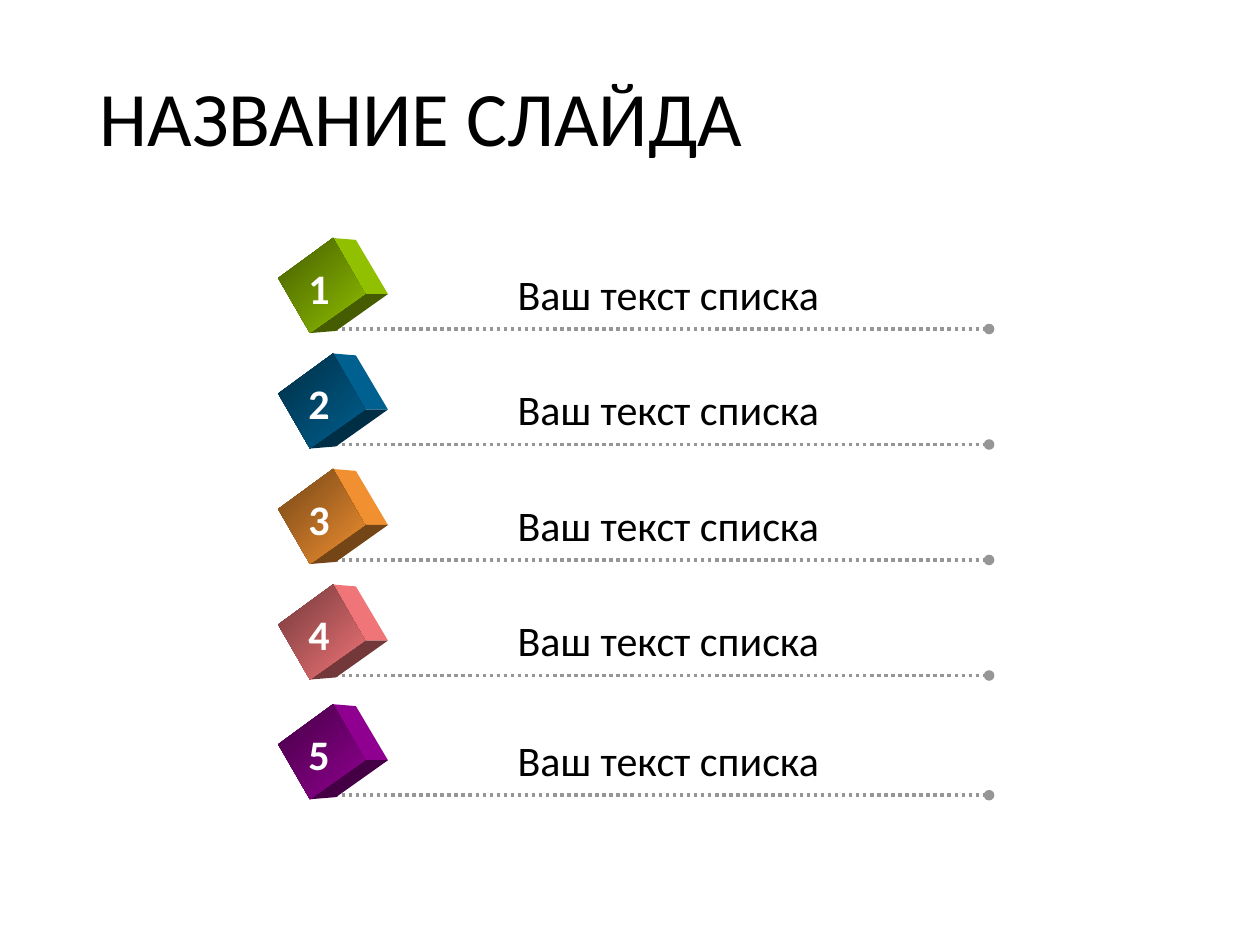
from lxml import etree
from pptx import Presentation
from pptx.dml.color import RGBColor
from pptx.enum.dml import MSO_LINE
from pptx.enum.shapes import MSO_CONNECTOR
from pptx.enum.text import MSO_ANCHOR, PP_ALIGN
from pptx.oxml.ns import qn
from pptx.util import Pt

DOTTED = MSO_LINE.ROUND_DOT
STRAIGHT = MSO_CONNECTOR.STRAIGHT
MIDDLE = MSO_ANCHOR.MIDDLE
LEFT = PP_ALIGN.LEFT

BLACK = RGBColor(0x00, 0x00, 0x00)
WHITE = RGBColor(0xFF, 0xFF, 0xFF)
GRAY = RGBColor(0x96, 0x96, 0x96)
GREEN = RGBColor(0x99, 0xCC, 0x00)
BLUE = RGBColor(0x00, 0x66, 0x99)
ORANGE = RGBColor(0xFF, 0x99, 0x33)
PINK = RGBColor(0xFF, 0x7C, 0x80)
PURPLE = RGBColor(0x99, 0x00, 0x99)

TITLE = "НАЗВАНИЕ СЛАЙДА"
ITEMS = [
    ("Ваш текст списка", GREEN),
    ("Ваш текст списка", BLUE),
    ("Ваш текст списка", ORANGE),
    ("Ваш текст списка", PINK),
    ("Ваш текст списка", PURPLE),
]
FIRST_LINE, PITCH, LAST_EXTRA = 188, 66, 2.4
LINE_LEFT, LINE_RIGHT = 187.2, 565.2

TOP, LEFT_CORNER, BOTTOM, INNER = (190.3, -52), (158.9, -29.1), (177.1, 2.3), (208.6, -20)
BACK_TOP, BACK_RIGHT, BACK_BOTTOM = (203.4, -50.9), (221.7, -20), (192, 1.1)
FRONT = [TOP, LEFT_CORNER, BOTTOM, INNER]
SIDE = [TOP, BACK_TOP, BACK_RIGHT, INNER]
UNDERSIDE = [BOTTOM, INNER, BACK_RIGHT, BACK_BOTTOM]

TITLE_FONT = {"name": "Calibri", "size": Pt(44), "bold": False}
ITEM_FONT = {"name": "Calibri", "size": Pt(24), "bold": False}
NUMBER_FONT = {"name": "Calibri", "size": Pt(24), "bold": True}


def shade(color, factor):
    return RGBColor(*(round(c * factor) for c in color))


def write(tf, text, font, color):
    p = tf.paragraphs[0]
    p.alignment = LEFT
    r = p.add_run()
    r.text = text
    for key, value in font.items():
        setattr(r.font, key, value)
    r.font.color.rgb = color


def add_label(shapes, box, text, font, color):
    tb = shapes.add_textbox(*(Pt(v) for v in box))
    tb.text_frame.word_wrap = False
    write(tb.text_frame, text, font, color)


def add_rule(shapes, y):
    line = shapes.add_connector(STRAIGHT, Pt(LINE_LEFT), Pt(y), Pt(LINE_RIGHT), Pt(y))
    line.line.color.rgb = GRAY
    line.line.width = Pt(2)
    line.line.dash_style = DOTTED
    ln = line.line._get_or_add_ln()
    etree.SubElement(ln, qn("a:tailEnd"), type="oval")
    etree.SubElement(line._element.spPr, qn("a:effectLst"))


def add_face(shapes, points, y, start, end):
    corners = [(Pt(px), Pt(y + py)) for px, py in points]
    builder = shapes.build_freeform(*corners[0])
    builder.add_line_segments(corners[1:], close=True)
    face = builder.convert_to_shape()
    face.shadow.inherit = False
    face.line.fill.background()
    if start == end:
        face.fill.solid()
        face.fill.fore_color.rgb = start
    else:
        face.fill.gradient()
        face.fill.gradient_angle = 315
        for stop, color in zip(face.fill.gradient_stops, (start, end)):
            stop.color.rgb = color


def add_item(s, number, text, color, y):
    shapes = s.shapes.add_group_shape().shapes
    light, dark = shade(color, 0.94), shade(color, 0.45)
    add_rule(shapes, y)
    add_face(shapes, SIDE, y, light, light)
    add_face(shapes, UNDERSIDE, y, dark, dark)
    add_face(shapes, FRONT, y, dark, light)
    add_label(shapes, (288.7, y - 38.2, 192, 36), text, ITEM_FONT, BLACK)
    add_label(shapes, (169.2, y - 41.8, 28, 36), str(number), NUMBER_FONT, WHITE)


def main():
    prs = Presentation()
    prs.slide_width, prs.slide_height = Pt(720), Pt(540)
    s = prs.slides.add_slide(prs.slide_layouts[5])

    title = s.shapes.title
    title.left, title.top, title.width, title.height = Pt(49.7), Pt(17.3), Pt(620.6), Pt(104.4)
    tf = title.text_frame
    tf.vertical_anchor = MIDDLE
    tf.paragraphs[0].line_spacing = 0.9
    write(tf, TITLE, TITLE_FONT, BLACK)

    for i, (text, color) in enumerate(ITEMS):
        extra = LAST_EXTRA if i == len(ITEMS) - 1 else 0
        add_item(s, i + 1, text, color, FIRST_LINE + i * PITCH + extra)

    prs.save("out.pptx")


if __name__ == "__main__":
    main()
